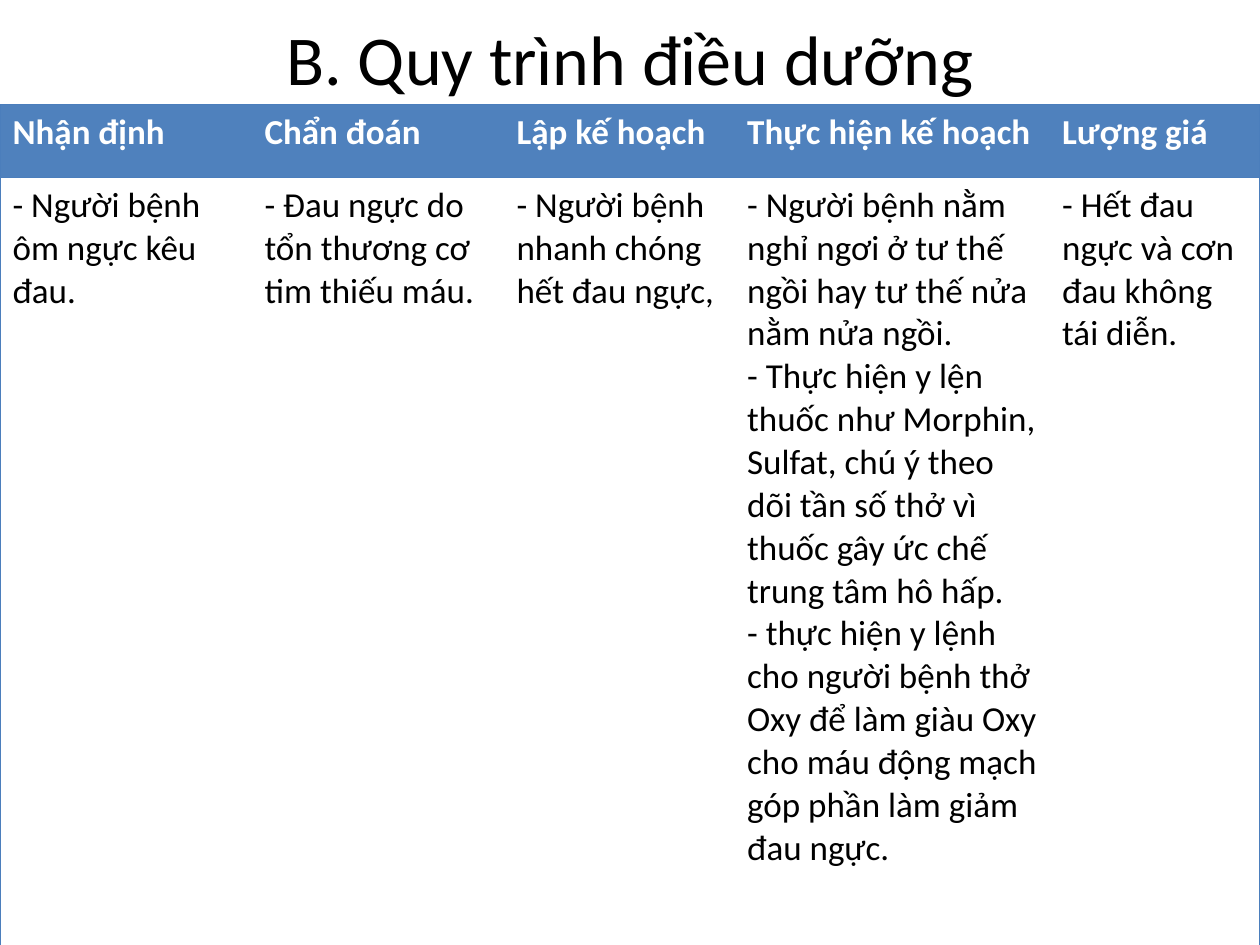
from lxml.etree import SubElement
from pptx import Presentation
from pptx.dml.color import RGBColor
from pptx.enum.text import MSO_ANCHOR, PP_ALIGN
from pptx.oxml.ns import qn
from pptx.util import Inches, Pt

TITLE = "B. Quy trình điều dưỡng"
# Heading, column width, paragraphs
COLUMNS = [
    ("Nhận định", 2, ["- Người bệnh ôm ngực kêu đau."]),
    ("Chẩn đoán", 2, ["- Đau ngực do tổn thương cơ tim thiếu máu."]),
    ("Lập kế hoạch", 1.83, ["- Người bệnh nhanh chóng hết đau ngực,"]),
    ("Thực hiện kế hoạch", 2.5, [
        "- Người bệnh nằm nghỉ ngơi ở tư thế ngồi hay tư thế nửa nằm nửa ngồi.",
        "- Thực hiện y lện thuốc như Morphin, Sulfat, chú ý theo dõi tần số thở "
        "vì thuốc gây ức chế trung tâm hô hấp.",
        "- thực hiện y lệnh cho người bệnh thở Oxy để làm giàu Oxy cho máu động "
        "mạch góp phần làm giảm đau ngực.",
    ]),
    ("Lượng giá", 1.67, ["- Hết đau ngực và cơn đau không tái diễn."]),
]
ROW_HEIGHTS = [0.58, 7.58]
TABLE_TOP = 0.83

THEME = {
    "border": "4B7EBC",
    "border_width": Pt(0.75),
    "header_fill": RGBColor.from_string("4F81BD"),
    "title": {"size": Pt(40), "color": "000000", "bold": False},
    "header": {"size": Pt(20), "color": "FFFFFF", "bold": True},
    "body": {"size": Pt(20), "color": "000000", "bold": False},
}


def write(text_frame, paragraphs, style, alignment=PP_ALIGN.LEFT):
    text_frame.word_wrap = True
    text_frame.text = "\n".join(paragraphs)
    for paragraph in text_frame.paragraphs:
        paragraph.alignment = alignment
        font = paragraph.runs[0].font
        for name, value in {"name": "Calibri", "size": style["size"], "bold": style["bold"]}.items():
            setattr(font, name, value)
        font.color.rgb = RGBColor.from_string(style["color"])


def set_borders(cell, visible_sides):
    """Draw the given sides (from L, R, T, B) and hide the others."""
    properties = cell._tc.get_or_add_tcPr()
    for side in "LRTB":
        line = SubElement(properties, qn(f"a:ln{side}"), w=str(THEME["border_width"]))
        if side in visible_sides:
            fill = SubElement(line, qn("a:solidFill"))
            SubElement(fill, qn("a:srgbClr"), val=THEME["border"])
        else:
            SubElement(line, qn("a:noFill"))


def add_title(slide):
    title = slide.shapes.add_textbox(Inches(0.5), 0, Inches(9), Inches(0.92))
    write(title.text_frame, [TITLE], THEME["title"], PP_ALIGN.CENTER)
    title.text_frame.vertical_anchor = MSO_ANCHOR.MIDDLE


def add_care_table(slide):
    widths = [width for _, width, _ in COLUMNS]
    table = slide.shapes.add_table(
        len(ROW_HEIGHTS), len(COLUMNS), 0, Inches(TABLE_TOP),
        Inches(sum(widths)), Inches(sum(ROW_HEIGHTS))).table
    table.horz_banding = False
    for row, height in zip(table.rows, ROW_HEIGHTS):
        row.height = Inches(height)

    last = len(COLUMNS) - 1
    for index, (heading, width, paragraphs) in enumerate(COLUMNS):
        table.columns[index].width = Inches(width)
        outer_sides = ("L" if index == 0 else "") + ("R" if index == last else "")
        header, body = table.cell(0, index), table.cell(1, index)

        set_borders(header, outer_sides + "TB")
        header.fill.solid()
        header.fill.fore_color.rgb = THEME["header_fill"]
        write(header.text_frame, [heading], THEME["header"])

        set_borders(body, outer_sides + "TB")
        body.fill.background()
        write(body.text_frame, paragraphs, THEME["body"])


def main():
    presentation = Presentation()
    presentation.slide_width, presentation.slide_height = Inches(10), Inches(7.5)
    slide = presentation.slides.add_slide(presentation.slide_layouts[6])
    add_title(slide)
    add_care_table(slide)
    presentation.save("out.pptx")


if __name__ == "__main__":
    main()
